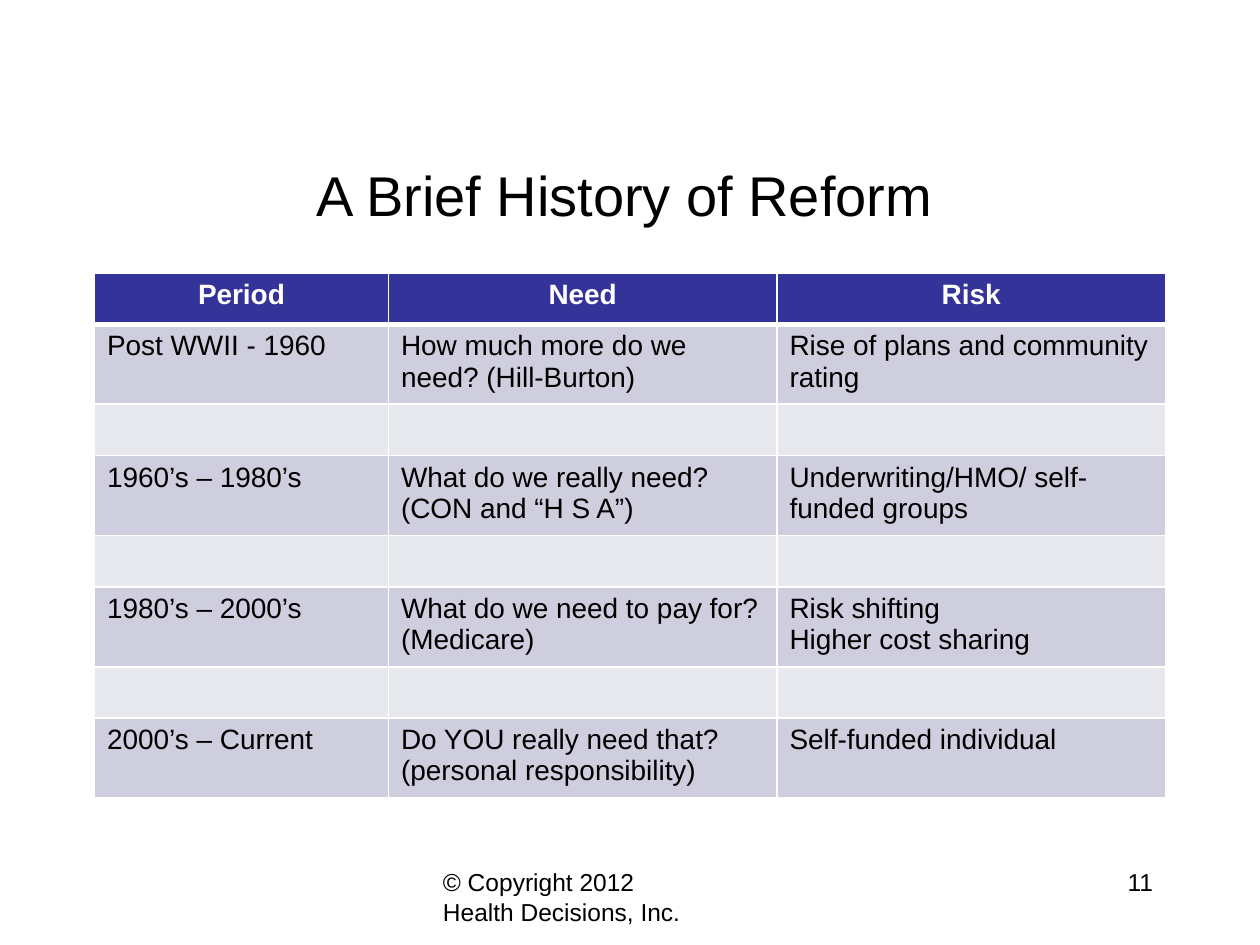
from pptx import Presentation
from pptx import util as u
from pptx.dml import color
from pptx.enum import text
from pptx.oxml import parse_xml
from pptx.oxml import ns

presentation = Presentation()
presentation.slide_width, presentation.slide_height = u.Inches(10), u.Inches(7.5)
slide = presentation.slides.add_slide(presentation.slide_layouts[6])

# Page grid: twelve columns and nine rows to the slide
COLUMN = presentation.slide_width / 12
ROW = presentation.slide_height / 9
LEFT, CENTER, RIGHT = text.PP_ALIGN.LEFT, text.PP_ALIGN.CENTER, text.PP_ALIGN.RIGHT


def write(frame, words, size, align, hex_color="000000", bold=False):
    frame.word_wrap = True
    frame.text = words
    for paragraph in frame.paragraphs:
        paragraph.alignment = align
        font = paragraph.font
        font.name, font.size, font.bold = "Arial", u.Pt(size), bold
        font.color.rgb = color.RGBColor.from_string(hex_color)


def add_border(cell, side, points):
    properties = cell._tc.get_or_add_tcPr()
    line = parse_xml(
        f'<a:{side} {ns.nsdecls("a")} w="{u.Pt(points)}"><a:solidFill>'
        f'<a:srgbClr val="FFFFFF"/></a:solidFill></a:{side}>')
    properties.append(line)


# Title, copyright line and page number: column, row, width, height
boxes = [
    ("A Brief History of Reform", 0.8, 1.4, 10.3, 0.9, 32, CENTER),
    ("© Copyright 2012\vHealth Decisions, Inc.", 4.1, 8.2, 3.8, 0.6, 14, LEFT),
    ("11", 8.6, 8.2, 2.5, 0.6, 14, RIGHT),
]
for words, left, top, width, height, size, align in boxes:
    shape = slide.shapes.add_textbox(
        int(left * COLUMN), int(top * ROW), int(width * COLUMN), int(height * ROW))
    write(shape.text_frame, words, size, align)
    if size == 32:
        shape.text_frame.vertical_anchor = text.MSO_ANCHOR.MIDDLE

# History table: a spacer row follows each period but the last
periods = [
    ("Post WWII - 1960", "How much more do we need? (Hill-Burton)",
     "Rise of plans and community rating"),
    ("1960’s – 1980’s", "What do we really need? (CON and “H S A”)",
     "Underwriting/HMO/ self-funded groups"),
    ("1980’s – 2000’s", "What do we need to pay for? (Medicare)",
     "Risk shifting\nHigher cost sharing"),
    ("2000’s – Current", "Do YOU really need that?\n(personal responsibility)",
     "Self-funded individual"),
]
rows = [("Period", "Need", "Risk")]
for period in periods:
    rows += [period, ("", "", "")]
rows.pop()

# Equal rows, which grow where the text takes two lines
table = slide.shapes.add_table(
    len(rows), 3, int(0.9 * COLUMN), int(2.6 * ROW),
    int(10.2 * COLUMN), int(len(rows) * 0.49 * ROW)).table
table.first_row = table.horz_banding = False
for column, share in zip(table.columns, (2.8, 3.7, 3.7)):
    column.width = int(share * COLUMN)

for index, words_in_row in enumerate(rows):
    header, period_row = index == 0, index % 2 == 1
    fill = "333399" if header else "CECEDE" if period_row else "E8E8EF"
    for cell, words in zip(table.rows[index].cells, words_in_row):
        write(cell.text_frame, words, 16, CENTER if header else LEFT,
              "FFFFFF" if header else "000000", header)
        # Borders come before the fill in the cell's properties
        for side in ("lnL", "lnR", "lnT", "lnB"):
            heavy = (index, side) in ((0, "lnB"), (1, "lnT"))
            add_border(cell, side, 3 if heavy else 1)
        cell.fill.solid()
        cell.fill.fore_color.rgb = color.RGBColor.from_string(fill)

presentation.save("out.pptx")
